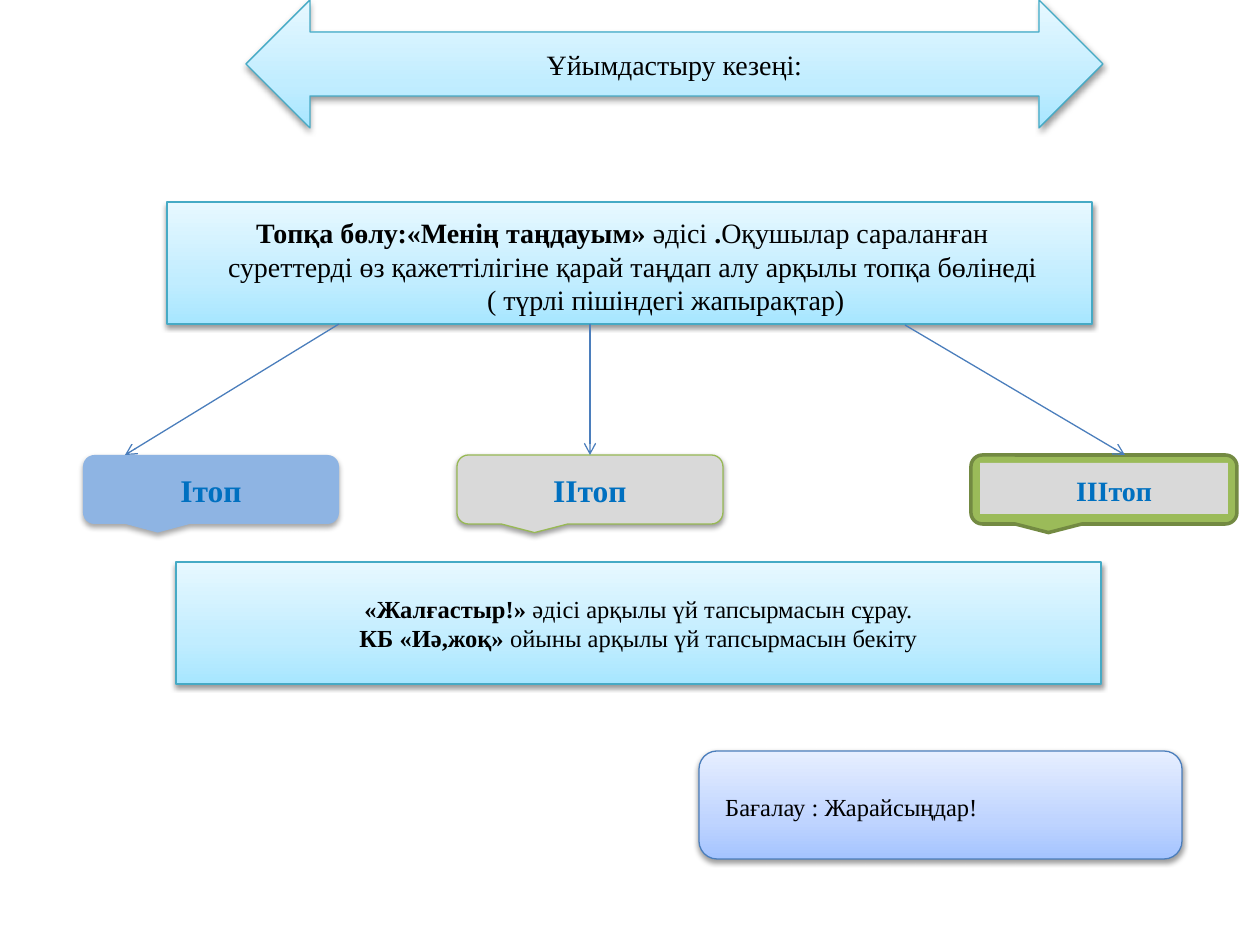
from copy import deepcopy

from lxml import etree
from pptx import Presentation
from pptx import util as u
from pptx.dml.color import RGBColor
from pptx.enum import shapes, text
from pptx.oxml.ns import qn

SCALE = 914400 / 126
FONT = "Times New Roman"
COLORS = {
    "black": "000000", "label": "0070C0", "aqua_line": "46AAC5",
    "blue_line": "4B7EBC", "blue": "8EB4E3", "grey": "D9D9D9",
    "green": "9BBB59", "green_line": "98B955", "dark_green": "738A42",
}
GRADIENTS = {
    "aqua": ("A7E6FF", "C1EDFF", "E7F8FF"),
    "sky": ("A4C4FF", "BFD4FF", "E6EEFF"),
}
STOPS = (0, 0.35, 1)
KIND = shapes.MSO_SHAPE
LEFT, CENTER = text.PP_ALIGN.LEFT, text.PP_ALIGN.CENTER


def px(n):
    return u.Emu(round(n * SCALE))


def rgb(name):
    return RGBColor.from_string(COLORS[name])


def set_gradient(fill, name):
    """Fill with three stops, the first colour at the bottom."""
    fill.gradient()
    fill.gradient_angle = 90
    first = fill.gradient_stops[0]._gs
    first.addnext(deepcopy(first))
    for stop, position, color in zip(fill.gradient_stops, STOPS, GRADIENTS[name]):
        stop.position = position
        stop.color.rgb = RGBColor.from_string(color)


def add_shadow(sp, alpha, dist):
    effects = sp._element.spPr.find(qn("a:effectLst"))
    shadow = etree.SubElement(effects, qn("a:outerShdw"), blurRad="40000",
                              dist=str(dist), dir="5400000", rotWithShape="0")
    color = etree.SubElement(shadow, qn("a:srgbClr"), val=COLORS["black"])
    etree.SubElement(color, qn("a:alpha"), val=str(alpha * 1000))


def add_box(s, kind, at, fill, line=None, width=0.75, shadow=(38, 20000)):
    sp = s.shapes.add_shape(kind, *map(px, at))
    sp.shadow.inherit = False
    if fill in GRADIENTS:
        set_gradient(sp.fill, fill)
    else:
        sp.fill.solid()
        sp.fill.fore_color.rgb = rgb(fill)
    if line:
        sp.line.color.rgb = rgb(line)
        sp.line.width = u.Pt(width)
    else:
        sp.line.fill.background()
    if shadow:
        add_shadow(sp, *shadow)
    return sp


def write(sp, paragraphs, size, color="black", align=CENTER, indents=(), **margins):
    """Each paragraph is a list of (text, bold); indents are first-line px."""
    tf = sp.text_frame
    frame = {"word_wrap": True, "auto_size": text.MSO_AUTO_SIZE.NONE,
             "vertical_anchor": text.MSO_ANCHOR.MIDDLE}
    frame.update({f"margin_{side}": px(n) for side, n in margins.items()})
    for name, value in frame.items():
        setattr(tf, name, value)
    for i, runs in enumerate(paragraphs):
        p = tf.add_paragraph() if i else tf.paragraphs[0]
        p.alignment = align
        if indents:
            p._p.get_or_add_pPr().set("indent", str(px(indents[i])))
        for words, bold in runs:
            r = p.add_run()
            r.text = words
            for name, value in {"name": FONT, "size": u.Pt(size), "bold": bold}.items():
                setattr(r.font, name, value)
            r.font.color.rgb = rgb(color)


def add_arrow(s, start, end, target=None):
    c = s.shapes.add_connector(shapes.MSO_CONNECTOR.STRAIGHT, *map(px, start + end))
    if target is not None:
        c.end_connect(target, 0)
    c.line.color.rgb = rgb("blue_line")
    c.line.width = u.Pt(0.75)
    spPr = c._element.spPr
    etree.SubElement(spPr.find(qn("a:ln")), qn("a:tailEnd"), type="arrow")
    etree.SubElement(spPr, qn("a:effectLst"))


def add_title(s, words):
    add_box(s, KIND.LEFT_RIGHT_ARROW, (246, 0, 857, 128), "aqua", "aqua_line")
    title = s.shapes.title
    title.left, title.top, title.width, title.height = map(px, (310, 32, 729, 64))
    write(title, [[(words, False)]], 16)
    s.shapes._spTree.append(title._element)


def add_groups(s):
    """Draw the three group callouts and return the middle one."""
    kind, top, height = KIND.ROUNDED_RECTANGULAR_CALLOUT, 455, 69
    first = add_box(s, kind, (83, top, 256, height), "blue", shadow=(35, 23000))
    second = add_box(s, kind, (457, top, 266, height), "grey", "green_line")
    add_box(s, kind, (971, top, 266, height), "green", "dark_green", 2, None)
    third = add_box(s, KIND.RECTANGLE, (980, 463, 248, 51), "grey", shadow=None)
    write(first, [[("Ітоп", True)]], 18, "label")
    write(second, [[("ІІтоп", True)]], 18, "label")
    write(third, [[("ІІІтоп", True)]], 16, "label", LEFT, left=96, top=9)
    return second


def main():
    prs = Presentation()
    prs.slide_width, prs.slide_height = px(1260), px(945)
    s = prs.slides.add_slide(prs.slide_layouts[5])

    rating = add_box(s, KIND.ROUNDED_RECTANGLE, (699, 751, 483, 108), "sky", "blue_line")
    write(rating, [[("Бағалау : Жарайсыңдар!", False)]], 14, align=LEFT, left=21, top=9)

    division = add_box(s, KIND.RECTANGLE, (167, 202, 925, 122), "aqua", "aqua_line")
    write(division, [
        [("Топқа бөлу:«Менің таңдауым» ", True), ("әдісі ", False), (".", True),
         ("Оқушылар сараланған суреттерді өз қажеттілігіне қарай "
          "таңдап алу арқылы топқа бөлінеді", False)],
        [("( түрлі пішіндегі жапырақтар)", False)],
    ], 16, align=LEFT, indents=(28, 259), left=61, top=12)

    middle = add_groups(s)
    add_arrow(s, (905, 325), (1125, 455))
    add_arrow(s, (590, 324), (590, 455), middle)
    add_arrow(s, (339, 324), (125, 455))
    add_title(s, "Ұйымдастыру кезеңі:")

    homework = add_box(s, KIND.RECTANGLE, (176, 562, 925, 122), "aqua", "aqua_line")
    write(homework, [
        [("«Жалғастыр!» ", True), ("әдісі арқылы үй тапсырмасын сұрау.", False)],
        [("КБ «Иә,жоқ» ", True), ("ойыны арқылы үй тапсырмасын бекіту", False)],
    ], 14)
    prs.save("out.pptx")


if __name__ == "__main__":
    main()
